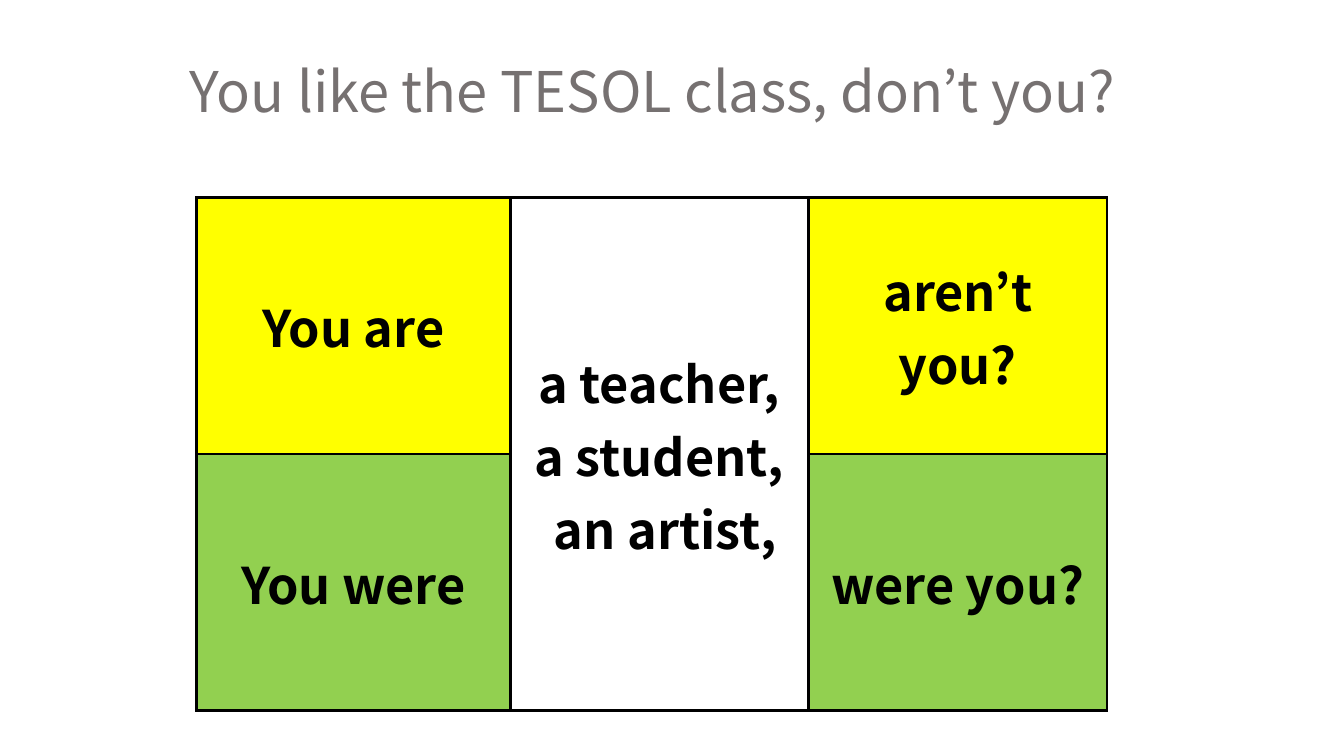
from lxml import etree
from pptx import Presentation
from pptx.dml.color import RGBColor
from pptx.enum.text import MSO_ANCHOR, MSO_AUTO_SIZE, PP_ALIGN
from pptx.oxml.ns import qn
from pptx.util import Inches, Pt

CENTER = PP_ALIGN.CENTER
MIDDLE = MSO_ANCHOR.MIDDLE
NO_AUTOFIT = MSO_AUTO_SIZE.NONE
TITLE_ONLY = 5

FONT = "Noto Sans CJK KR"
BLACK, WHITE, GRAY = "000000", "FFFFFF", "767171"
YELLOW, GREEN = "FFFF00", "92D050"

COLUMN_WIDTHS = (3.11, 2.96, 2.96)
ROWS = [
    (YELLOW, "You are", "aren’t you?"),
    (GREEN, "You were", "were you?"),
]
COMPLEMENTS = "a teacher,\na student,\n an artist,"


def color(value):
    return RGBColor.from_string(value)


def write_text(text_frame, text, size, text_color=BLACK, bold=False):
    """Write one centred paragraph for each line of text."""
    text_frame.word_wrap = True
    text_frame.text = text
    for paragraph in text_frame.paragraphs:
        paragraph.alignment = CENTER
        font = paragraph.runs[0].font
        font.name = FONT
        font.size = Pt(size)
        font.bold = bold
        font.color.rgb = color(text_color)


def add_borders(cell, width=2.25, line_color=BLACK):
    """Outline the cell; must run before the cell's fill is set."""
    properties = cell._tc.get_or_add_tcPr()
    for side in ("a:lnL", "a:lnR", "a:lnT", "a:lnB"):
        line = etree.SubElement(properties, qn(side), w=str(Pt(width)))
        fill = etree.SubElement(line, qn("a:solidFill"))
        etree.SubElement(fill, qn("a:srgbClr"), val=line_color)


def format_cell(cell, fill_color, text=None):
    add_borders(cell)
    cell.fill.solid()
    cell.fill.fore_color.rgb = color(fill_color)
    cell.vertical_anchor = MIDDLE
    if text:
        write_text(cell.text_frame, text, size=36, bold=True)


def add_title(slide, left, top, width, height):
    title = slide.shapes.title
    title.left, title.top = Inches(left), Inches(top)
    title.width, title.height = Inches(width), Inches(height)
    text_frame = title.text_frame
    text_frame.auto_size = NO_AUTOFIT
    text_frame.vertical_anchor = MIDDLE
    write_text(text_frame, "You like the TESOL class, don’t you?",
               size=40, text_color=GRAY)


def add_tag_question_table(slide, left, top, width, height):
    table = slide.shapes.add_table(
        len(ROWS), len(COLUMN_WIDTHS),
        Inches(left), Inches(top), Inches(width), Inches(height)).table
    for column, column_width in zip(table.columns, COLUMN_WIDTHS):
        column.width = Inches(column_width)
    table.cell(0, 1).merge(table.cell(1, 1))
    for index, (fill_color, statement, tag) in enumerate(ROWS):
        format_cell(table.cell(index, 0), fill_color, statement)
        format_cell(table.cell(index, 1), WHITE,
                    COMPLEMENTS if index == 0 else None)
        format_cell(table.cell(index, 2), fill_color, tag)


def main():
    presentation = Presentation()
    presentation.slide_width = Inches(13.33)
    presentation.slide_height = Inches(7.5)
    slide = presentation.slides.add_slide(
        presentation.slide_layouts[TITLE_ONLY])
    add_tag_question_table(slide, 1.95, 1.96, sum(COLUMN_WIDTHS), 5.09)
    add_title(slide, 1.6, 0.51, 9.74, 0.77)
    presentation.save("out.pptx")


if __name__ == "__main__":
    main()
